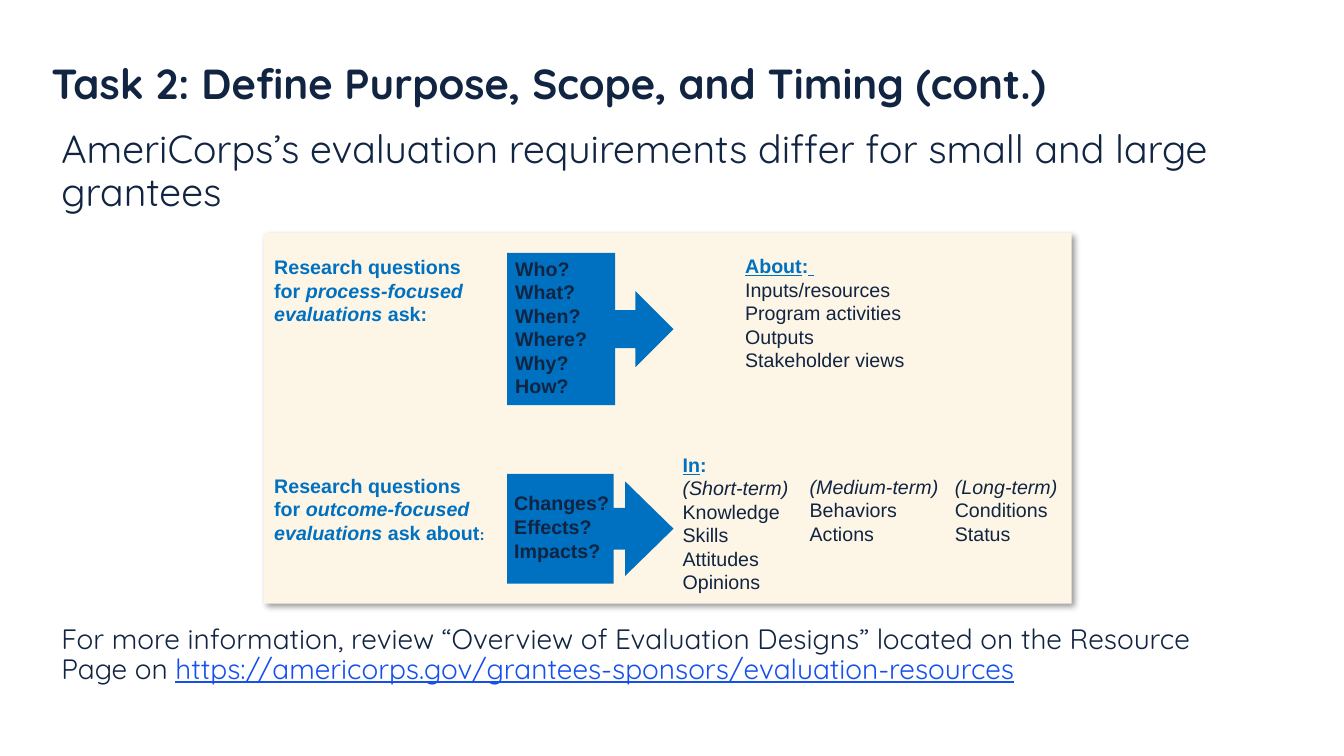
from dataclasses import dataclass

from lxml.etree import SubElement
from pptx import Presentation
from pptx.dml.color import RGBColor
from pptx.enum.shapes import MSO_SHAPE
from pptx.enum.text import MSO_ANCHOR
from pptx.oxml.ns import qn
from pptx.util import Emu, Pt


@dataclass(frozen=True)
class Theme:
    navy: str = "112441"
    blue: str = "0070C0"
    link: str = "1550ED"
    cream: str = "FDF6E6"
    shade: str = "000000"
    head: str = "Quicksand"
    body: str = "Arial"
    title: int = 30
    lead: int = 28
    note: int = 20
    label: int = 14
    small: int = 11


T = Theme()
SCALE = 9144  # 100 px to the inch


def px(n):
    return Emu(n * SCALE)


def run(text, style="", color=T.navy, size=T.label, font=T.body):
    """Describe a run; style holds any of b, i and u."""
    return text, style, color, size, font


def rows(names, style=""):
    """Give each name a paragraph of its own."""
    return [[run(name, style)] for name in names]


def add_text(slide, area, lines, anchor=MSO_ANCHOR.TOP, inset=(0, 0), space=None):
    frame = slide.shapes.add_textbox(*map(px, area)).text_frame
    frame.word_wrap = True
    frame.vertical_anchor = anchor
    frame.margin_left = frame.margin_right = px(inset[0])
    frame.margin_top = frame.margin_bottom = px(inset[1])
    for i, line in enumerate(lines):
        para = frame.add_paragraph() if i else frame.paragraphs[0]
        if space:
            para.line_spacing = space
        for text, style, color, size, font in line:
            part = para.add_run()
            part.text = text
            part.font.name = font
            part.font.size = Pt(size)
            part.font.color.rgb = RGBColor.from_string(color)
            part.font.bold = "b" in style
            part.font.italic = "i" in style
            part.font.underline = "u" in style


def add_block(slide, kind, area, color, adjust=()):
    shape = slide.shapes.add_shape(kind, *map(px, area))
    shape.shadow.inherit = False
    shape.fill.solid()
    shape.fill.fore_color.rgb = RGBColor.from_string(color)
    shape.line.fill.background()
    for i, value in enumerate(adjust):
        shape.adjustments[i] = value
    return shape


def add_shadow(shape):
    effects = shape._element.spPr.find(qn("a:effectLst"))
    outer = SubElement(effects, qn("a:outerShdw"), blurRad=str(Pt(4)),
                       dist=str(Pt(3)), dir=str(45 * 60000), algn="tl", rotWithShape="0")
    color = SubElement(outer, qn("a:srgbClr"), val=T.shade)
    SubElement(color, qn("a:alpha"), val="40000")


def add_prompt(slide, area, focus, *tail):
    """Add the blue question label at the left of a row."""
    add_text(slide, area, [[
        run("Research questions for ", "b", T.blue),
        run(f"{focus} evaluations ", "bi", T.blue), *tail]])


def add_process(slide):
    add_block(slide, MSO_SHAPE.RIGHT_ARROW_CALLOUT, (503, 251, 165, 151), T.blue)
    add_prompt(slide, (272, 253, 214, 75), "process-focused", run("ask:", "b", T.blue))
    asks = ("Who?", "What?", "When?", "Where?", "Why?", "How?")
    add_text(slide, (511, 264, 90, 121), rows(asks, "b"), MSO_ANCHOR.MIDDLE)
    about = [run("About", "bu", T.blue), run(":", "b", T.blue), run(" ", "bu", T.blue)]
    topics = ("Inputs/resources", "Program activities", "Outputs", "Stakeholder views")
    add_text(slide, (739, 252, 201, 126), [about] + rows(topics))


def add_outcome(slide):
    add_block(slide, MSO_SHAPE.RIGHT_ARROW_CALLOUT, (503, 470, 165, 109), T.blue,
              (0.38, 0.43, 0.44, 0.64))
    add_prompt(slide, (272, 470, 214, 73), "outcome-focused",
               run("ask about", "b", T.blue), run(":", "b", T.blue, T.small))
    asks = ("Changes?", "Effects?", "Impacts?")
    add_text(slide, (510, 468, 105, 109), rows(asks, "b"), MSO_ANCHOR.MIDDLE)
    first = [[run("In", "bu", T.blue), run(":", "b", T.blue)]]
    terms = (
        ((677, 449, 112, 140), first, "(Short-term)",
         ("Knowledge", "Skills", "Attitudes", "Opinions")),
        ((803, 471, 138, 99), [], "(Medium-term)", ("Behaviors", "Actions")),
        ((947, 471, 125, 74), [], "(Long-term)", ("Conditions", "Status")),
    )
    for area, top, term, items in terms:
        add_text(slide, area, top + rows([term], "i") + rows(items))


def main():
    deck = Presentation()
    deck.slide_width, deck.slide_height = px(1333), px(750)
    slide = deck.slides.add_slide(deck.slide_layouts[6])

    add_shadow(add_block(slide, MSO_SHAPE.RECTANGLE, (262, 231, 801, 368), T.cream))
    title = run("Task 2: Define Purpose, Scope, and Timing (cont.)", "b",
                size=T.title, font=T.head)
    add_text(slide, (51, 62, 1048, 46), [[title]], MSO_ANCHOR.BOTTOM, space=0.9)
    lead = run("AmeriCorps’s evaluation requirements differ for small and large grantees",
               size=T.lead, font=T.head)
    add_text(slide, (51, 124, 1176, 95), [[lead]], inset=(10, 5), space=0.9)
    add_process(slide)
    add_outcome(slide)
    note = [
        run("For more information, review “Overview of Evaluation Designs” located on "
            "the Resource Page on ", size=T.note, font=T.head),
        run("https://americorps.gov/grantees-sponsors/evaluation-resources", "u",
            T.link, T.note, T.head),
    ]
    add_text(slide, (51, 615, 1176, 75), [note], inset=(10, 5), space=0.9)
    deck.save("out.pptx")


if __name__ == "__main__":
    main()
